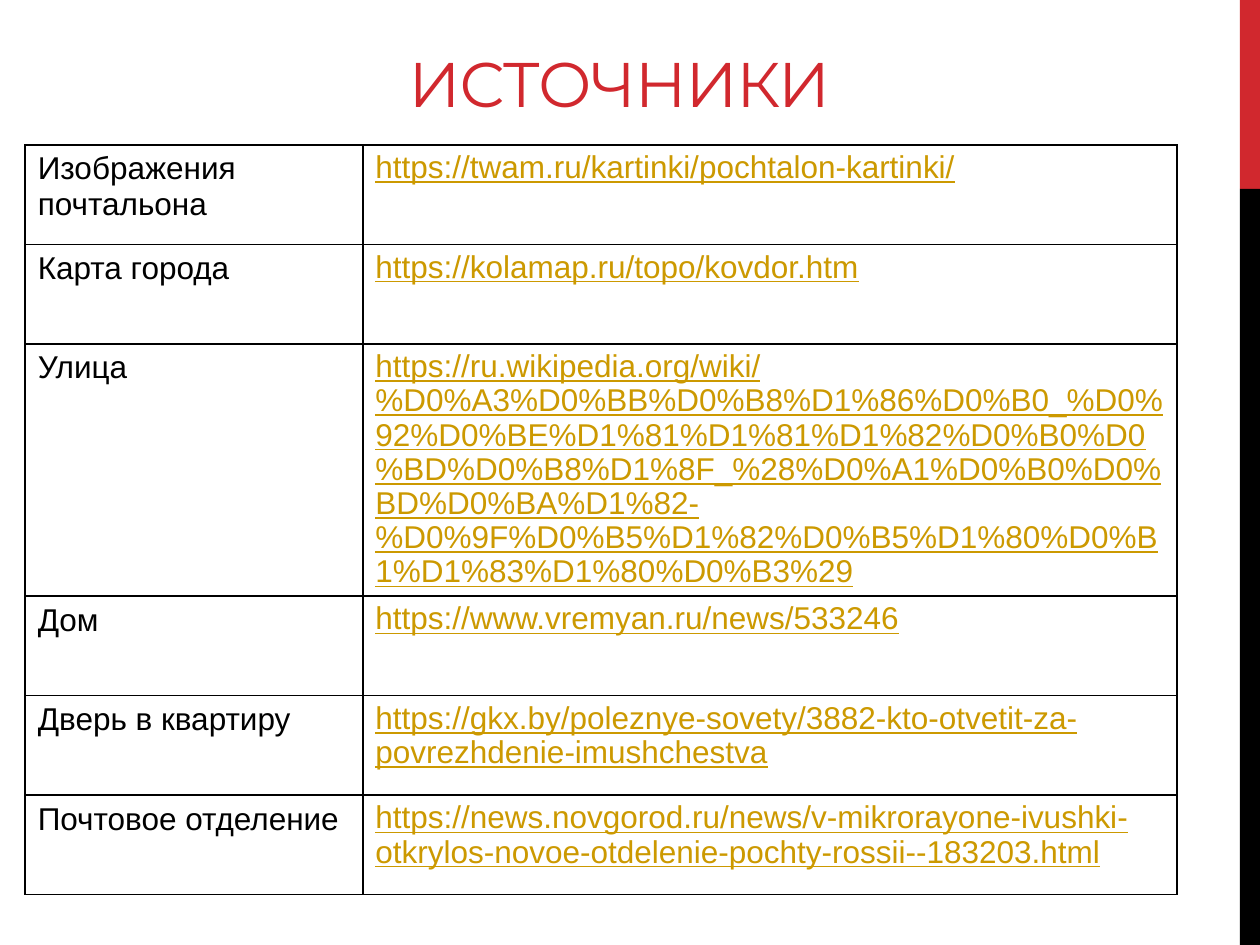
from dataclasses import dataclass
from typing import NamedTuple

from lxml.etree import SubElement
from pptx import Presentation
from pptx.dml.color import RGBColor
from pptx.enum.text import MSO_ANCHOR, PP_ALIGN
from pptx.oxml.ns import qn
from pptx.util import Inches, Pt


@dataclass(frozen=True)
class Theme:
    red: str = "D1282E"
    black: str = "000000"
    link: str = "CC9900"
    title_font: str = "Montserrat"
    body_font: str = "Arial"
    title_size: int = 36
    body_size: int = 18
    border: int = 1


class Bar(NamedTuple):
    top: float
    height: float
    color: str


class Source(NamedTuple):
    subject: str
    url: str


THEME = Theme()
BARS = [Bar(0, 1.5, THEME.red), Bar(1.5, 6, THEME.black)]
COL_WIDTHS = (2.68, 6.46)
ROW_HEIGHT = 0.79
SOURCES = [
    Source("Изображения почтальона", "https://twam.ru/kartinki/pochtalon-kartinki/"),
    Source("Карта города", "https://kolamap.ru/topo/kovdor.htm"),
    Source("Улица", "https://ru.wikipedia.org/wiki/"
           "%D0%A3%D0%BB%D0%B8%D1%86%D0%B0_"
           "%D0%92%D0%BE%D1%81%D1%81%D1%82%D0%B0%D0%BD%D0%B8%D1%8F_"
           "%28%D0%A1%D0%B0%D0%BD%D0%BA%D1%82-"
           "%D0%9F%D0%B5%D1%82%D0%B5%D1%80%D0%B1%D1%83%D1%80%D0%B3%29"),
    Source("Дом", "https://www.vremyan.ru/news/533246"),
    Source("Дверь в квартиру", "https://gkx.by/poleznye-sovety/"
           "3882-kto-otvetit-za-povrezhdenie-imushchestva"),
    Source("Почтовое отделение", "https://news.novgorod.ru/news/"
           "v-mikrorayone-ivushki-otkrylos-novoe-otdelenie-pochty-rossii--183203.html"),
]


def add_run(p, text: str, color: str, **formats):
    r = p.add_run()
    r.text = text
    for name, value in formats.items():
        setattr(r.font, name, value)
    r.font.color.rgb = RGBColor.from_string(color)
    return r


def add_bar(slide, bar: Bar) -> None:
    sp = slide.shapes.add_shape(1, Inches(9.84), Inches(bar.top),
                                Inches(0.16), Inches(bar.height))
    sp.shadow.inherit = False
    sp.fill.solid()
    sp.fill.fore_color.rgb = RGBColor.from_string(bar.color)
    sp.line.fill.background()


def add_title(slide, text: str) -> None:
    sp = slide.shapes.title
    box = {"left": 0.5, "top": 0.17, "width": 8.83, "height": 0.83}
    for name, value in box.items():
        setattr(sp, name, Inches(value))
    tf = sp.text_frame
    tf.vertical_anchor = MSO_ANCHOR.BOTTOM
    p = tf.paragraphs[0]
    p.alignment = PP_ALIGN.CENTER
    r = add_run(p, text, THEME.red, name=THEME.title_font, size=Pt(THEME.title_size))
    r._r.get_or_add_rPr().set("spc", "-60")


def set_borders(cell) -> None:
    tc_pr = cell._tc.get_or_add_tcPr()
    for side in ("lnL", "lnR", "lnT", "lnB"):
        ln = SubElement(tc_pr, qn(f"a:{side}"), w=str(Pt(THEME.border)))
        fill = SubElement(ln, qn("a:solidFill"))
        SubElement(fill, qn("a:srgbClr"), val=THEME.black)


def fill_cell(cell, text: str, color: str, underline: bool) -> None:
    set_borders(cell)
    cell.fill.background()
    add_run(cell.text_frame.paragraphs[0], text, color, name=THEME.body_font,
            size=Pt(THEME.body_size), underline=underline)


def add_sources(slide, sources: list[Source]) -> None:
    height = Inches(6.05)
    frame = slide.shapes.add_table(len(sources), len(COL_WIDTHS), Inches(0.2),
                                   Inches(1.15), Inches(9.13), height)
    table = frame.table
    table.first_row = table.horz_banding = False
    for col, width in zip(table.columns, COL_WIDTHS):
        col.width = Inches(width)
    for row, source in zip(table.rows, sources):
        row.height = Inches(ROW_HEIGHT)
        subject, url = row.cells
        fill_cell(subject, source.subject, THEME.black, False)
        fill_cell(url, source.url, THEME.link, True)
        url.text_frame.paragraphs[0].line_spacing = 0.97
    # Rows grow with their text, so the frame is taller than their minimum
    frame.height = height


def main() -> None:
    prs = Presentation()
    prs.slide_width, prs.slide_height = Inches(10), Inches(7.5)
    slide = prs.slides.add_slide(prs.slide_layouts[5])

    # Edge bars
    for bar in BARS:
        add_bar(slide, bar)

    # Title and table of sources
    add_title(slide, "ИСТОЧНИКИ")
    add_sources(slide, SOURCES)
    prs.save("out.pptx")


if __name__ == "__main__":
    main()
